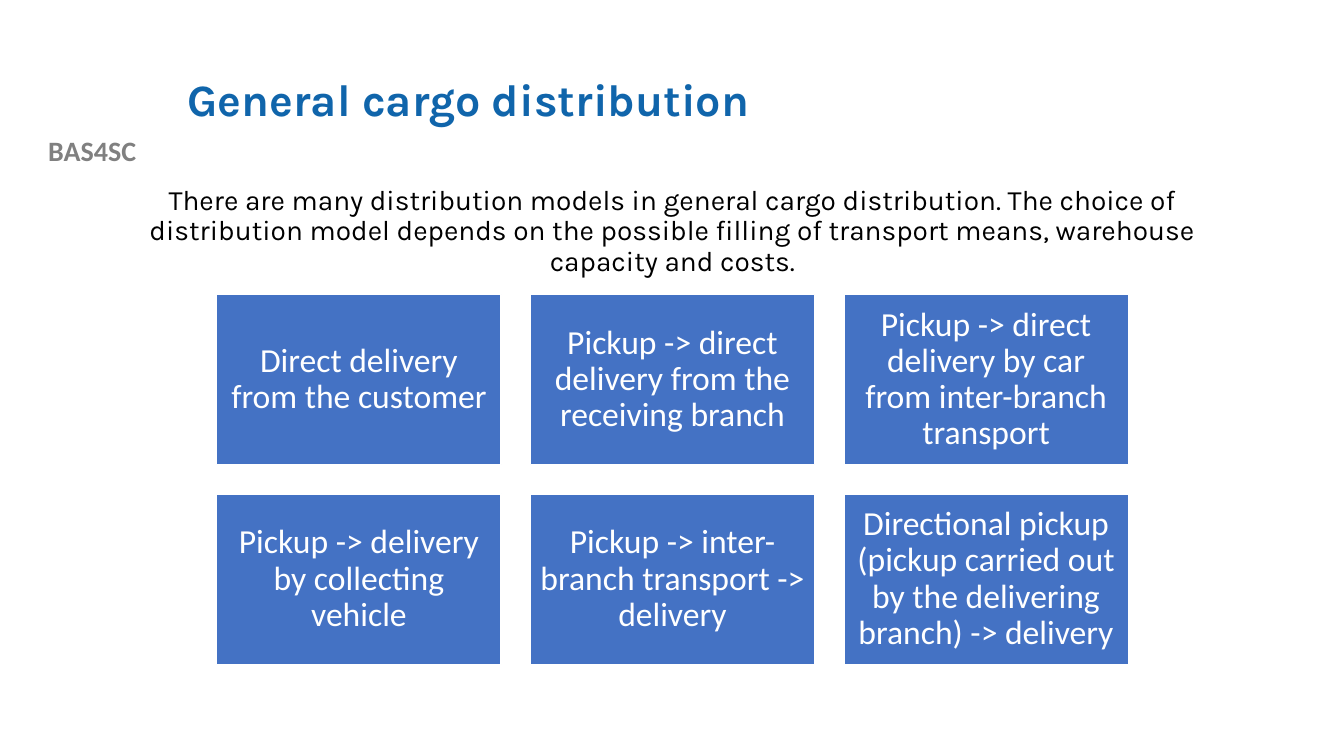
from dataclasses import dataclass

from pptx import Presentation
from pptx.dml.color import RGBColor
from pptx.enum.shapes import MSO_SHAPE
from pptx.enum.text import MSO_ANCHOR, PP_ALIGN
from pptx.shapes.autoshape import Shape
from pptx.slide import Slide
from pptx.util import Pt

PX = 9144  # EMU per px, 100 px to the inch

TITLE_BLUE = RGBColor(0x10, 0x65, 0xAB)
CARD_BLUE = RGBColor(0x44, 0x72, 0xC4)
GREY = RGBColor(0x80, 0x80, 0x80)
BLACK = RGBColor(0x00, 0x00, 0x00)
WHITE = RGBColor(0xFF, 0xFF, 0xFF)

# Grid of distribution models
COLUMNS = 3
GRID_LEFT, GRID_TOP = 215, 292
CARD_WIDTH, CARD_HEIGHT = 282, 169
STEP_X, STEP_Y = 311, 198
MODELS = [
    "Direct delivery from the customer",
    "Pickup -> direct delivery from the receiving branch",
    "Pickup -> direct delivery by car from inter-branch transport",
    "Pickup -> delivery by collecting vehicle",
    "Pickup -> inter-branch transport -> delivery",
    "Directional pickup (pickup carried out by the delivering branch) -> delivery",
]


@dataclass(frozen=True)
class Area:
    left: int
    top: int
    width: int
    height: int

    def emu(self) -> tuple[int, int, int, int]:
        return self.left * PX, self.top * PX, self.width * PX, self.height * PX


@dataclass(frozen=True)
class Style:
    font: str
    size: int
    color: RGBColor
    bold: bool = False
    align: PP_ALIGN = PP_ALIGN.CENTER
    anchor: MSO_ANCHOR = MSO_ANCHOR.TOP
    spacing: float = 0.9


LABEL = Style("Calibri", 20, GREY, bold=True, spacing=1.0)
TITLE = Style("Karla", 32, TITLE_BLUE, bold=True, align=PP_ALIGN.LEFT,
              anchor=MSO_ANCHOR.MIDDLE)
INTRO = Style("Karla", 20, BLACK)
CARD = Style("Calibri", 24, WHITE, anchor=MSO_ANCHOR.MIDDLE)


def write(box: Shape, text: str, style: Style) -> None:
    frame = box.text_frame
    frame.word_wrap = True
    frame.vertical_anchor = style.anchor
    frame.text = text
    para = frame.paragraphs[0]
    para.alignment = style.align
    para.line_spacing = style.spacing
    para.font.name = style.font
    para.font.size = Pt(style.size)
    para.font.bold = style.bold
    para.font.color.rgb = style.color


def add_text(page: Slide, area: Area, text: str, style: Style) -> None:
    write(page.shapes.add_textbox(*area.emu()), text, style)


def add_card(page: Slide, area: Area, text: str) -> None:
    card = page.shapes.add_shape(MSO_SHAPE.RECTANGLE, *area.emu())
    card.shadow.inherit = False
    card.fill.solid()
    card.fill.fore_color.rgb = CARD_BLUE
    card.line.color.rgb = WHITE
    card.line.width = Pt(1)
    frame = card.text_frame
    frame.margin_left = frame.margin_right = 10 * PX
    frame.margin_top = frame.margin_bottom = 10 * PX
    write(card, text, CARD)


def main() -> None:
    deck = Presentation()
    deck.slide_width, deck.slide_height = 1333 * PX, 750 * PX
    page = deck.slides.add_slide(deck.slide_layouts[5])

    # Title and project label
    title = page.shapes.title
    title.left, title.top, title.width, title.height = Area(176, 40, 1066, 122).emu()
    write(title, "General cargo distribution", TITLE)
    add_text(page, Area(0, 128, 183, 44), "BAS4SC", LABEL)

    # Model cards
    for index, model in enumerate(MODELS):
        row, column = divmod(index, COLUMNS)
        add_card(page, Area(GRID_LEFT + column * STEP_X, GRID_TOP + row * STEP_Y,
                            CARD_WIDTH, CARD_HEIGHT), model)

    # Introduction
    add_text(page, Area(92, 180, 1150, 133),
             "There are many distribution models in general cargo distribution. "
             "The choice of distribution model depends on the possible filling of "
             "transport means, warehouse capacity and costs.", INTRO)

    deck.save("out.pptx")


if __name__ == "__main__":
    main()
